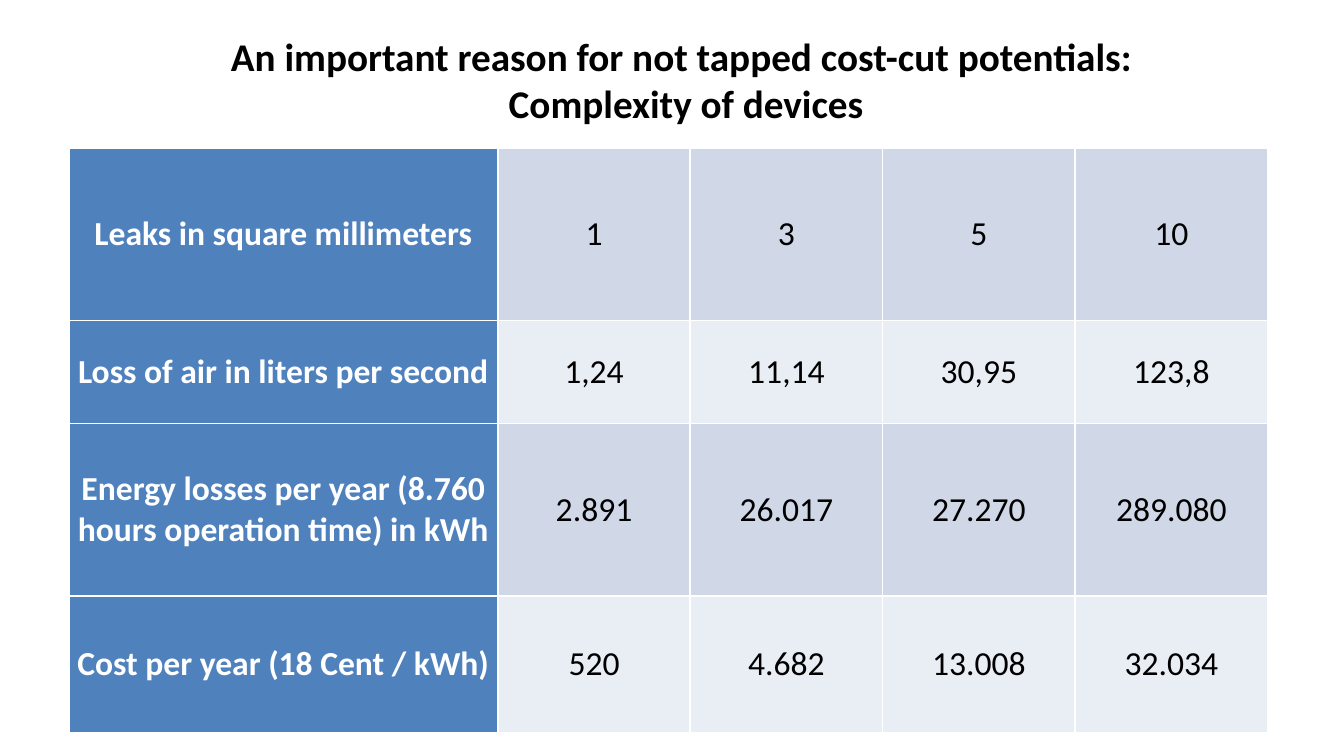
from dataclasses import dataclass

import lxml.etree
import pptx
import pptx.dml.color
import pptx.enum.text
import pptx.oxml.ns
import pptx.util

Pt = pptx.util.Pt
FONT = "Calibri"
COLOURS = {
    "white": "FFFFFF",
    "black": "000000",
    "header": "4F81BD",
    "band_dark": "D0D8E8",
    "band_light": "E9EDF4",
}
TITLE_LINES = [
    "An important reason for not tapped cost-cut potentials: ",
    "Complexity of devices",
]
COLUMN_WIDTHS = [229.7] + [103.1] * 4


@dataclass
class LeakRow:
    label: str
    values: list[str]
    height: float


ROWS = [
    LeakRow("Leaks in square millimeters", ["1", "3", "5", "10"], 92.2),
    LeakRow("Loss of air in liters per second", ["1,24", "11,14", "30,95", "123,8"], 55.3),
    LeakRow(
        "Energy losses per year (8.760 hours operation time) in kWh",
        ["2.891", "26.017", "27.270", "289.080"],
        92.2,
    ),
    LeakRow("Cost per year (18 Cent / kWh)", ["520", "4.682", "13.008", "32.034"], 73.4),
]


def colour(name: str) -> pptx.dml.color.RGBColor:
    return pptx.dml.color.RGBColor.from_string(COLOURS[name])


def format_paragraph(paragraph, size: float, ink: str, bold: bool) -> None:
    paragraph.alignment = pptx.enum.text.PP_ALIGN.CENTER
    paragraph.font.name = FONT
    paragraph.font.size = Pt(size)
    paragraph.font.bold = bold
    paragraph.font.color.rgb = colour(ink)


def add_borders(cell, ink: str, width: float) -> None:
    properties = cell._tc.get_or_add_tcPr()
    qn = pptx.oxml.ns.qn
    for position, side in enumerate(("lnL", "lnR", "lnT", "lnB")):
        line = lxml.etree.Element(qn(f"a:{side}"), w=str(Pt(width)))
        fill = lxml.etree.SubElement(line, qn("a:solidFill"))
        lxml.etree.SubElement(fill, qn("a:srgbClr"), val=COLOURS[ink])
        properties.insert(position, line)


def fill_cell(cell, text: str, background: str, ink: str, bold: bool) -> None:
    cell.text = text
    cell.vertical_anchor = pptx.enum.text.MSO_ANCHOR.MIDDLE
    cell.margin_left = cell.margin_right = Pt(4.5)
    cell.margin_top = cell.margin_bottom = Pt(0)
    cell.fill.solid()
    cell.fill.fore_color.rgb = colour(background)
    paragraph = cell.text_frame.paragraphs[0]
    paragraph.space_after = Pt(6)
    format_paragraph(paragraph, 18, ink, bold)
    add_borders(cell, "white", 1)


def add_title(page) -> None:
    title = page.shapes.title
    title.left, title.top = Pt(103), Pt(-1.5)
    title.width, title.height = Pt(529.2), Pt(87.8)
    frame = title.text_frame
    frame.text = "\n".join(TITLE_LINES)
    frame.word_wrap = True
    frame.auto_size = pptx.enum.text.MSO_AUTO_SIZE.NONE
    frame.vertical_anchor = pptx.enum.text.MSO_ANCHOR.MIDDLE
    for paragraph in frame.paragraphs:
        format_paragraph(paragraph, 21, "black", True)


def add_leak_table(page, rows: list[LeakRow]) -> None:
    table = page.shapes.add_table(
        len(rows), len(COLUMN_WIDTHS), Pt(37), Pt(79.5),
        Pt(sum(COLUMN_WIDTHS)), Pt(sum(row.height for row in rows)),
    ).table
    for column, width in zip(table.columns, COLUMN_WIDTHS):
        column.width = Pt(width)
    for row_index, row in enumerate(rows):
        table.rows[row_index].height = Pt(row.height)
        band = "band_light" if row_index % 2 else "band_dark"
        fill_cell(table.cell(row_index, 0), row.label, "header", "white", True)
        for column_index, value in enumerate(row.values, start=1):
            fill_cell(table.cell(row_index, column_index), value, band, "black", False)


def main() -> None:
    deck = pptx.Presentation()
    deck.slide_width, deck.slide_height = Pt(720), Pt(405)
    page = deck.slides.add_slide(deck.slide_layouts[5])
    add_title(page)
    add_leak_table(page, ROWS)
    deck.save("out.pptx")


if __name__ == "__main__":
    main()
